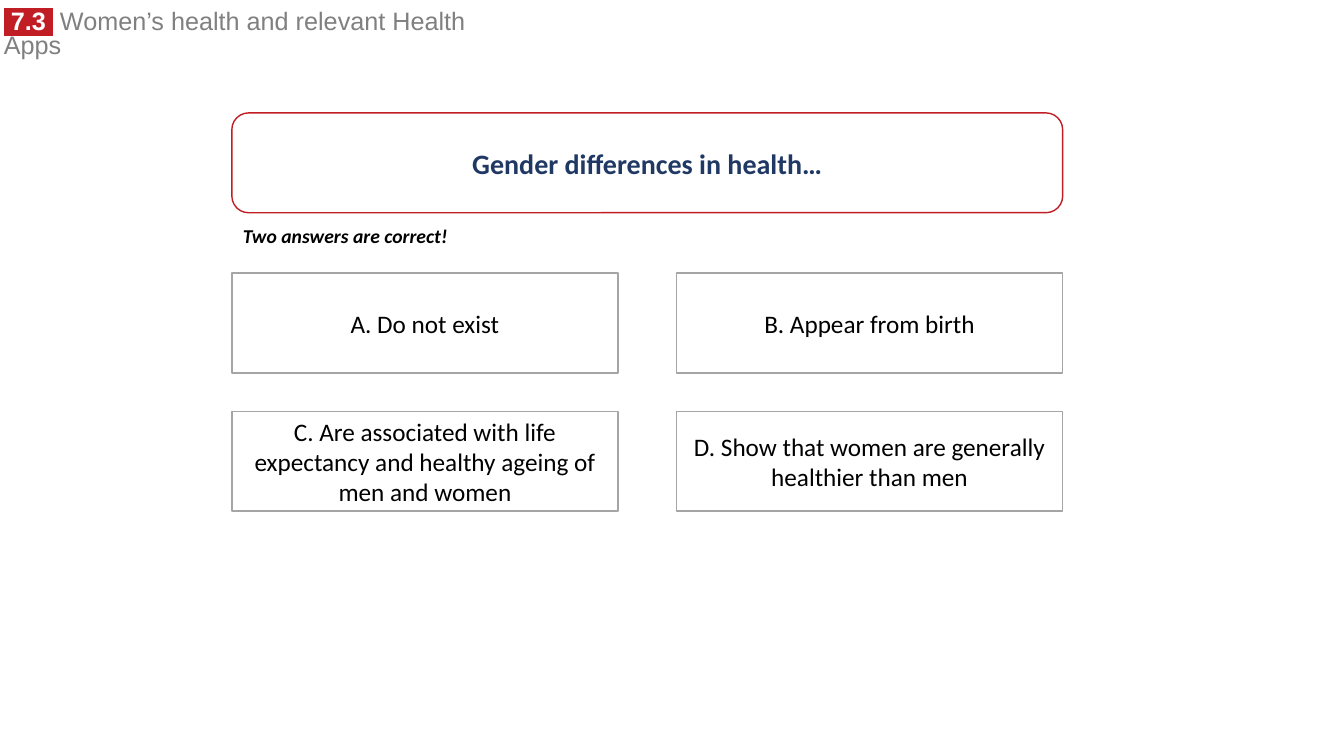
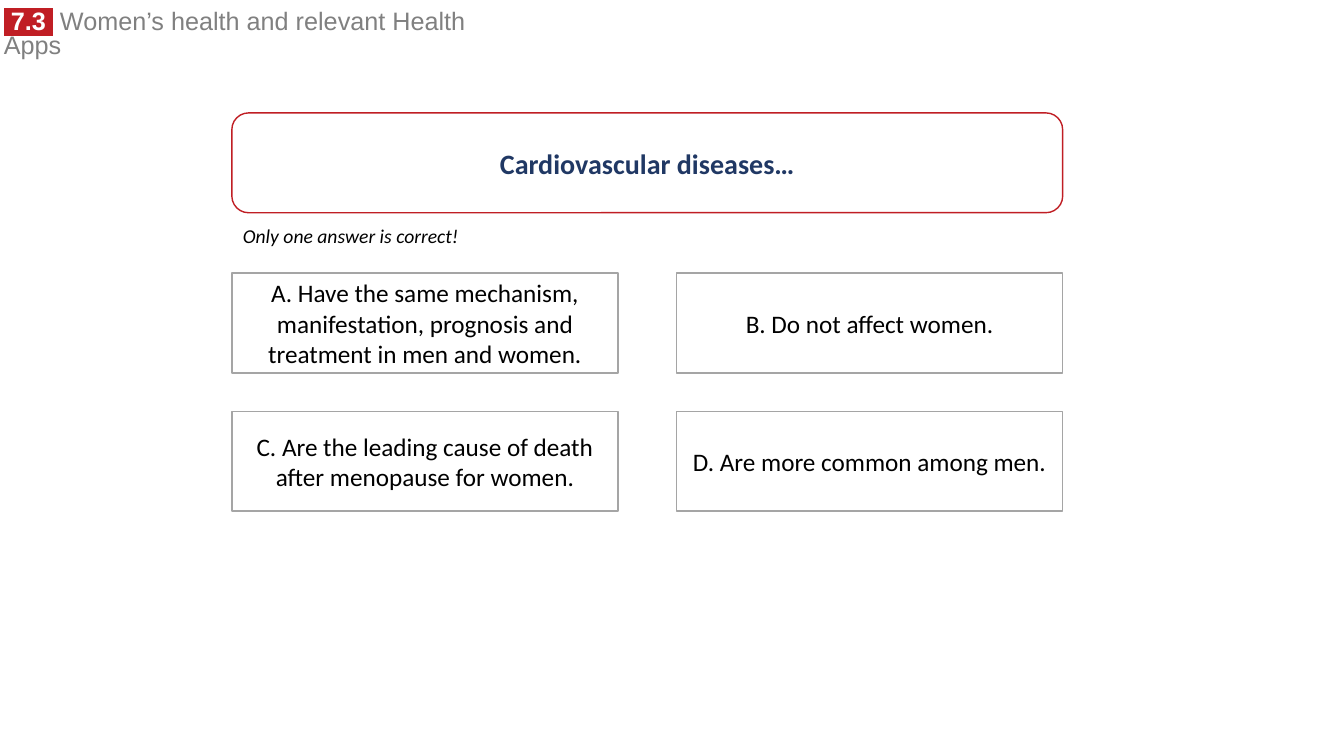
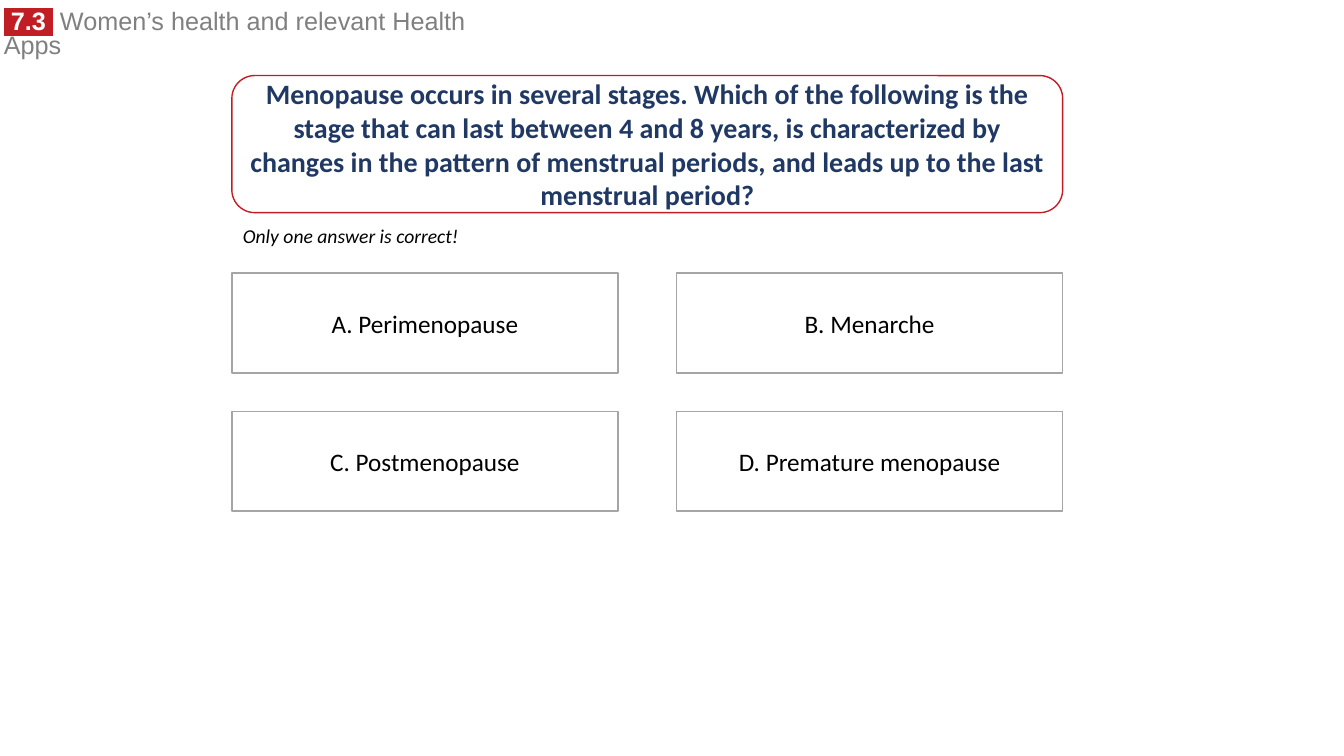
from dataclasses import dataclass

from lxml import etree
from pptx import Presentation
from pptx.dml.color import RGBColor
from pptx.enum import shapes, text
from pptx.oxml import ns
from pptx.util import Inches, Pt


@dataclass(frozen=True)
class Theme:
    white: str = "FFFFFF"
    black: str = "000000"
    red: str = "C01E24"
    navy: str = "203864"
    border: str = "A5A5A5"
    header_grey: str = "808080"
    header_font: str = "Arial"
    quiz_font: str = "Calibri"
    question_size: int = 20
    body_size: int = 18
    hint_size: int = 14


@dataclass(frozen=True)
class Box:
    left: float
    top: float
    width: float
    height: float

    def lengths(self):
        return [Inches(v) for v in (self.left, self.top, self.width, self.height)]


@dataclass(frozen=True)
class Quiz:
    question: str
    hint: str
    answers: tuple[str, ...]
    hint_bold: bool = False
    question_top: float = 1.12


THEME = Theme()

# Page grid
LEFT, QUESTION_WIDTH, QUESTION_BOTTOM = 2.3, 8.24, 2.11
ANSWER_TOP, ANSWER_WIDTH, ANSWER_HEIGHT = 2.71, 3.83, 0.99
COLUMN_STEP, ROW_STEP = 4.41, 1.37
CORNER_RATIO = 1 / 6
CORNER_TEXT_INSET = 0.29  # share of the corner radius kept free of text

QUIZZES = (
    Quiz(
        "Gender differences in health…",
        "Two answers are correct!",
        (
            "A. Do not exist",
            "B. Appear from birth",
            "C. Are associated with life expectancy and healthy ageing of men and women",
            "D. Show that women are generally healthier than men",
        ),
        hint_bold=True,
    ),
    Quiz(
        "Cardiovascular diseases…",
        "Only one answer is correct!",
        (
            "A. Have the same mechanism, manifestation, prognosis and treatment in men and women.",
            "B. Do not affect women.",
            "C. Are the leading cause of death after menopause for women.",
            "D. Are more common among men.",
        ),
    ),
    Quiz(
        "Menopause occurs in several stages. Which of the following is the stage that can last "
        "between 4 and 8 years, is characterized by changes in the pattern of menstrual periods, "
        "and leads up to the last menstrual period?",
        "Only one answer is correct!",
        ("A. Perimenopause", "B. Menarche", "C. Postmenopause", "D. Premature menopause"),
        question_top=0.75,
    ),
)


def add_run(paragraph, words: str, size: int, color: str, font: str = THEME.quiz_font,
            bold: bool = False, italic: bool = False):
    run = paragraph.add_run()
    run.text = words
    run.font.size = Pt(size)
    run.font.color.rgb = RGBColor.from_string(color)
    run.font.name = font
    run.font.bold = bold
    run.font.italic = italic
    return run


def highlight(run, color: str) -> None:
    fill = run.font._element.find(ns.qn("a:solidFill"))
    mark = etree.Element(ns.qn("a:highlight"))
    etree.SubElement(mark, ns.qn("a:srgbClr")).set("val", color)
    fill.addnext(mark)


def add_outlined(slide, preset, box: Box, line_color: str):
    outlined = slide.shapes.add_shape(preset, *box.lengths())
    outlined.shadow.inherit = False
    outlined.fill.solid()
    outlined.fill.fore_color.rgb = RGBColor.from_string(THEME.white)
    outlined.line.color.rgb = RGBColor.from_string(line_color)
    outlined.line.width = Pt(1)
    return outlined


def add_header(slide) -> None:
    """Build the chapter header and move it to the layout all slides share."""
    header = slide.shapes.add_textbox(*Box(-0.06, 0.06, 5.01, 0.35).lengths())
    frame = header.text_frame
    frame.word_wrap = True
    chapter = frame.paragraphs[0]
    chapter.line_spacing = 0.8
    number = add_run(chapter, " 7.3 ", THEME.body_size, THEME.white, THEME.header_font, bold=True)
    highlight(number, THEME.red)
    add_run(chapter, " Women’s health and relevant Health Apps", THEME.body_size,
            THEME.header_grey, THEME.header_font)
    slide.slide_layout.shapes._spTree.append(header._element)


def add_question(slide, quiz: Quiz) -> None:
    height = QUESTION_BOTTOM - quiz.question_top
    outline = Box(LEFT, quiz.question_top, QUESTION_WIDTH, height)
    panel = add_outlined(slide, shapes.MSO_SHAPE.ROUNDED_RECTANGLE, outline, THEME.red)

    # The title lies on the panel, clear of its rounded corners
    question = slide.shapes.title
    panel._element.addnext(question._element)
    question.left, question.top, question.width, question.height = outline.lengths()
    frame = question.text_frame
    frame.word_wrap = True
    frame.auto_size = text.MSO_AUTO_SIZE.NONE
    frame.vertical_anchor = text.MSO_ANCHOR.MIDDLE
    frame.margin_left = frame.margin_right = Inches(
        0.1 + height * CORNER_RATIO * CORNER_TEXT_INSET)
    frame.margin_top = frame.margin_bottom = 0
    paragraph = frame.paragraphs[0]
    paragraph.alignment = text.PP_ALIGN.CENTER
    add_run(paragraph, quiz.question, THEME.question_size, THEME.navy, bold=True)


def add_hint(slide, quiz: Quiz) -> None:
    hint = slide.shapes.add_textbox(*Box(2.31, 2.17, 2.4, 0.34).lengths())
    hint.text_frame.word_wrap = True
    add_run(hint.text_frame.paragraphs[0], quiz.hint, THEME.hint_size, THEME.black,
            bold=quiz.hint_bold, italic=True)


def add_answers(slide, quiz: Quiz) -> None:
    for index, words in enumerate(quiz.answers):
        row, column = divmod(index, 2)
        box = Box(LEFT + column * COLUMN_STEP, ANSWER_TOP + row * ROW_STEP,
                  ANSWER_WIDTH, ANSWER_HEIGHT)
        answer = add_outlined(slide, shapes.MSO_SHAPE.RECTANGLE, box, THEME.border)
        frame = answer.text_frame
        frame.word_wrap = True
        frame.vertical_anchor = text.MSO_ANCHOR.MIDDLE
        paragraph = frame.paragraphs[0]
        paragraph.alignment = text.PP_ALIGN.CENTER
        add_run(paragraph, words, THEME.body_size, THEME.black)


def main() -> None:
    deck = Presentation()
    deck.slide_width, deck.slide_height = Inches(13.33), Inches(7.5)
    title_only = deck.slide_layouts[5]
    for index, quiz in enumerate(QUIZZES):
        slide = deck.slides.add_slide(title_only)
        if index == 0:
            add_header(slide)
        add_question(slide, quiz)
        add_hint(slide, quiz)
        add_answers(slide, quiz)
    deck.save("out.pptx")


if __name__ == "__main__":
    main()
